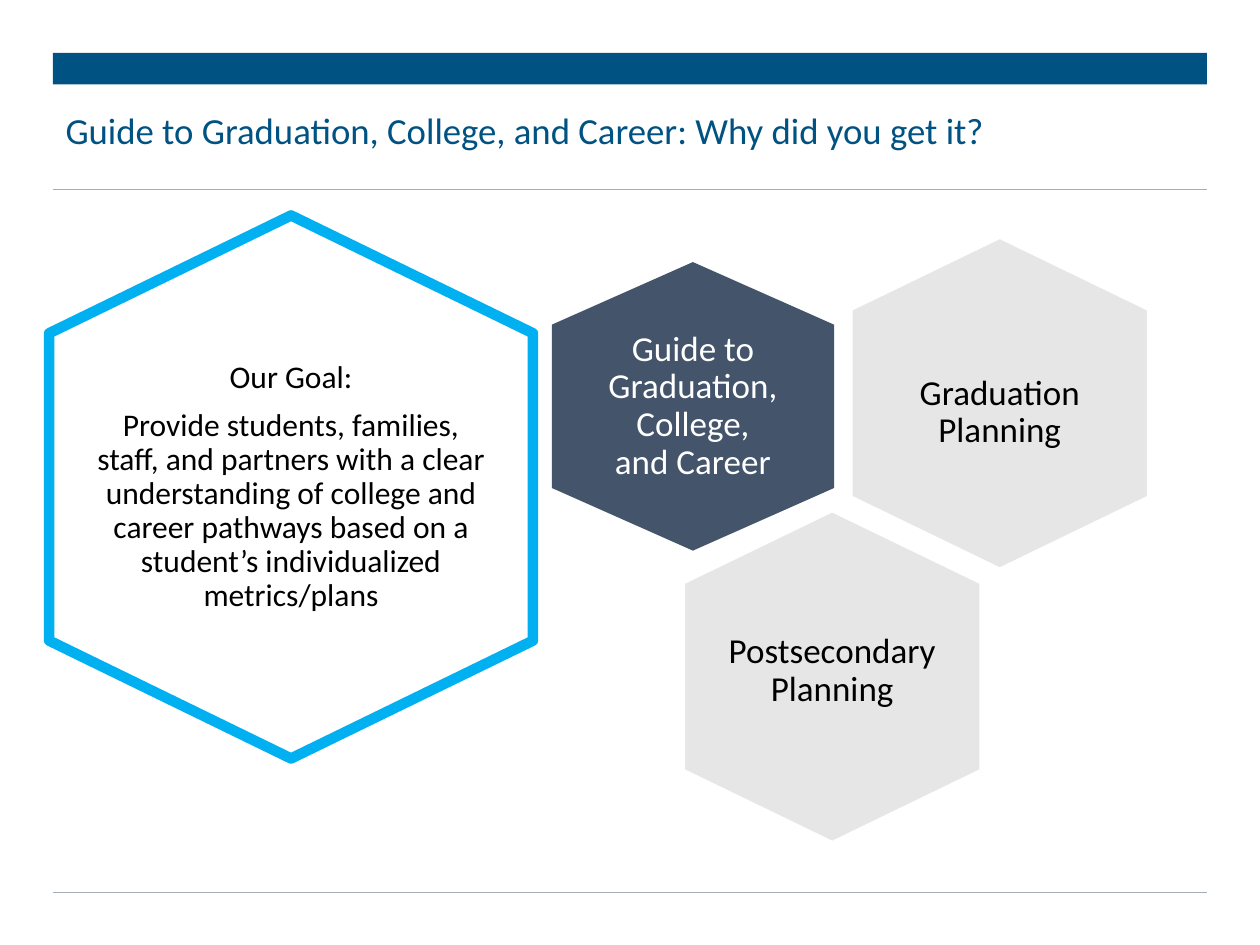
"""Build the slide on why families get the graduation guide."""
from dataclasses import dataclass
from typing import Optional

from lxml.etree import SubElement
from pptx import Presentation
from pptx.dml.color import RGBColor as Rgb
from pptx.enum.shapes import MSO_CONNECTOR as Link, MSO_SHAPE as Kind
from pptx.enum.text import MSO_ANCHOR as Anchor, MSO_AUTO_SIZE as Fit, PP_ALIGN as Align
from pptx.oxml.ns import qn
from pptx.util import Inches, Pt

CELL = 0.1
COLS, ROWS = 100, 75
EDGE, SPAN = 4.2, 91.6
SLOPE = 0.217


@dataclass(frozen=True)
class Theme:
    font: str = "Calibri"
    navy: str = "005283"
    slate: str = "44546A"
    sky: str = "00B0F0"
    pale: str = "E7E6E6"
    rule: str = "A4AEB5"
    white: str = "FFFFFF"
    black: str = "000000"
    head: float = 21
    label: float = 20
    body: float = 18


@dataclass(frozen=True)
class Box:
    col: float
    row: float
    wide: float
    high: float


@dataclass(frozen=True)
class Para:
    text: str
    size: float
    color: str
    after: float = 8


@dataclass(frozen=True)
class Hex:
    box: Box
    fill: Optional[str] = None
    line: Optional[str] = None
    width: float = 1
    pad: tuple = (0, 0)
    paras: tuple = ()


@dataclass(frozen=True)
class Label:
    box: Box
    para: Para


LOOK = Theme()
HEXES = (
    Hex(Box(67.6, 18.9, 23.5, 26.2), LOOK.pale, LOOK.white),
    Hex(Box(54.3, 40.6, 23.5, 26.2), LOOK.pale, LOOK.white),
    Hex(Box(43.8, 20.8, 22.4, 22.9), LOOK.slate, pad=(4.3, 4.8), paras=(
        Para("Guide to Graduation, College, and Career", LOOK.label, LOOK.white),)),
    Hex(Box(3.9, 17.1, 38.4, 43.1), line=LOOK.sky, width=6, pad=(3.5, 4), paras=(
        Para("Our Goal:", LOOK.body, LOOK.black),
        Para("Provide students, families, staff, and partners with a clear "
             "understanding of college and career pathways based on a "
             "student’s individualized metrics/plans", LOOK.body, LOOK.black, 15))),
)
LABELS = (
    Label(Box(68.5, 23.5, 21.7, 18.5), Para("Graduation Planning", LOOK.label, LOOK.black)),
    Label(Box(56.2, 46.4, 19.7, 13.7), Para("Postsecondary Planning", LOOK.label, LOOK.black)),
)


def unit(cells: float) -> int:
    return Inches(cells * CELL)


def place(box: Box) -> tuple:
    return tuple(unit(n) for n in (box.col, box.row, box.wide, box.high))


def add_run(para, text: str, size: float, color: str) -> None:
    run = para.add_run()
    run.text = text
    run.font.name = LOOK.font
    run.font.size = Pt(size)
    run.font.color.rgb = Rgb.from_string(color)


def write(frame, paras: tuple, pad: tuple) -> None:
    frame.word_wrap = True
    frame.vertical_anchor = Anchor.MIDDLE
    frame.margin_left = frame.margin_right = unit(pad[0])
    frame.margin_top = frame.margin_bottom = unit(pad[1])
    for spot, item in enumerate(paras):
        para = frame.add_paragraph() if spot else frame.paragraphs[0]
        para.alignment = Align.CENTER
        para.line_spacing = 0.9
        para.space_after = Pt(item.after)
        add_run(para, item.text, item.size, item.color)


def paint(shape, fill: Optional[str], line: Optional[str], width: float = 1) -> None:
    shape.shadow.inherit = False
    if fill:
        shape.fill.solid()
        shape.fill.fore_color.rgb = Rgb.from_string(fill)
    else:
        shape.fill.background()
    if line:
        shape.line.color.rgb = Rgb.from_string(line)
        shape.line.width = Pt(width)
    else:
        shape.line.fill.background()


def draw_hex(slide, item: Hex) -> None:
    left, top, wide, high = place(item.box)
    mid, right, base = left + wide // 2, left + wide, top + high
    drop = round(high * SLOPE)
    pen = slide.shapes.build_freeform(mid, top, scale=1.0)
    pen.add_line_segments([(right, top + drop), (right, base - drop), (mid, base),
                           (left, base - drop), (left, top + drop)], close=True)
    shape = pen.convert_to_shape()
    paint(shape, item.fill, item.line, item.width)
    if item.paras:
        write(shape.text_frame, item.paras, item.pad)


def draw_label(slide, item: Label) -> None:
    box = slide.shapes.add_textbox(*place(item.box))
    write(box.text_frame, (item.para,), (0.8, 0.8))


def draw_rule(slide, row: float) -> None:
    rule = slide.shapes.add_connector(
        Link.STRAIGHT, unit(EDGE), unit(row), unit(EDGE + SPAN), unit(row))
    rule.line.color.rgb = Rgb.from_string(LOOK.rule)
    rule.line.width = Pt(0.5)
    SubElement(rule._element.spPr, qn("a:effectLst"))


def set_title(slide, text: str) -> None:
    title = slide.shapes.title
    title.left, title.top, title.width, title.height = place(Box(EDGE, 5.8, SPAN, 9.5))
    frame = title.text_frame
    frame.auto_size = Fit.NONE
    frame.vertical_anchor = Anchor.MIDDLE
    para = frame.paragraphs[0]
    para.alignment = Align.LEFT
    para.line_spacing = 0.9
    add_run(para, text, LOOK.head, LOOK.navy)


def main() -> None:
    deck = Presentation()
    deck.slide_width, deck.slide_height = unit(COLS), unit(ROWS)
    slide = deck.slides.add_slide(deck.slide_layouts[5])
    band = slide.shapes.add_shape(Kind.RECTANGLE, *place(Box(EDGE, 4.2, SPAN, 2.5)))
    paint(band, LOOK.navy, None)
    for row in (15, 70.8):
        draw_rule(slide, row)
    set_title(slide, "Guide to Graduation, College, and Career: Why did you get it?")
    for item in HEXES:
        draw_hex(slide, item)
    for item in LABELS:
        draw_label(slide, item)
    deck.save("out.pptx")


if __name__ == "__main__":
    main()
